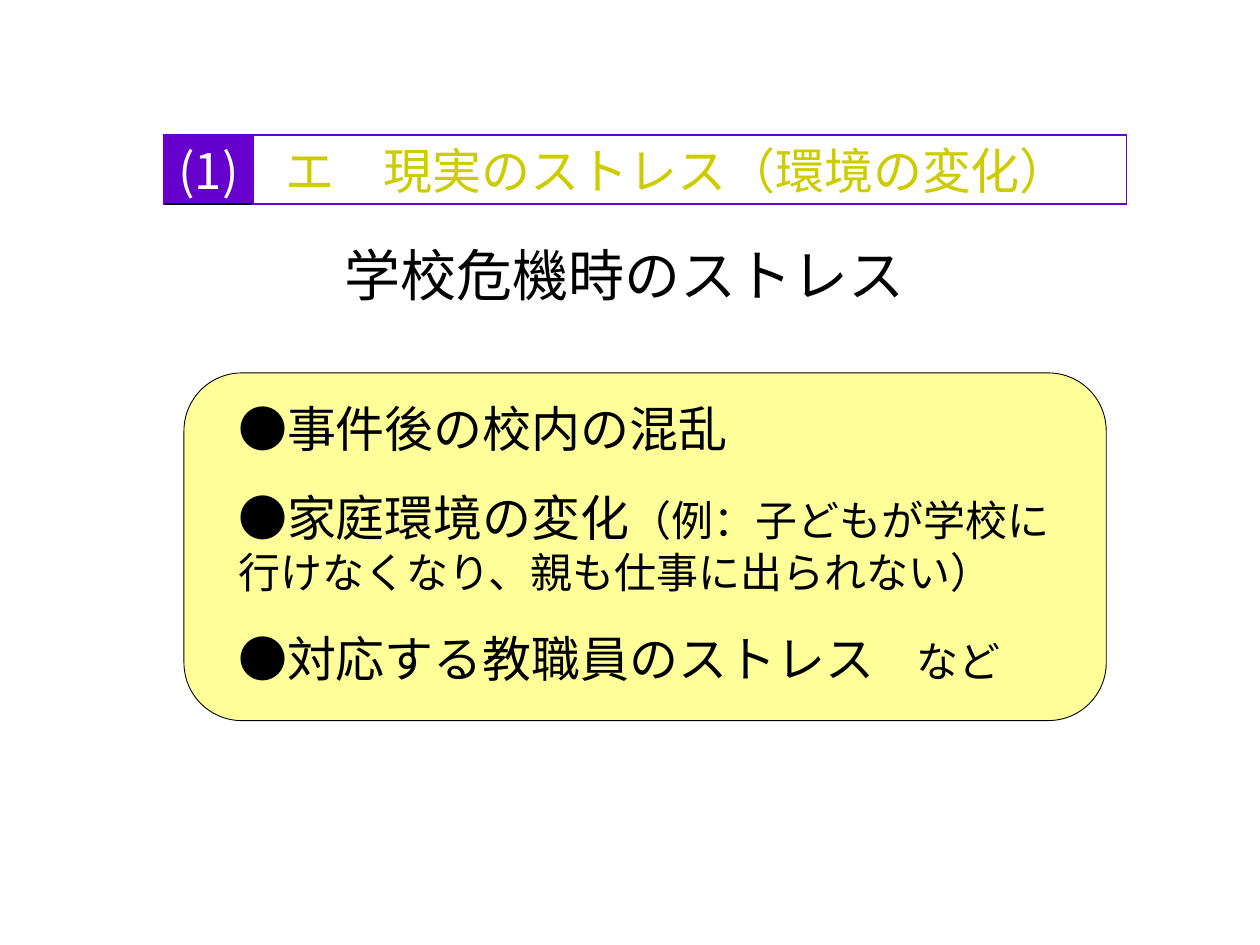
"""Build a slide on the stress a school faces during a crisis."""
from dataclasses import dataclass

from lxml.etree import SubElement
from pptx import Presentation
from pptx.dml.color import RGBColor
from pptx.enum.shapes import MSO_SHAPE as Shape
from pptx.enum.text import MSO_ANCHOR as Anchor, PP_ALIGN as Align
from pptx.oxml.ns import qn
from pptx.util import Inches, Pt

BLACK = RGBColor(0x00, 0x00, 0x00)
WHITE = RGBColor(0xFF, 0xFF, 0xFF)
PURPLE = RGBColor(0x66, 0x00, 0xCC)
OLIVE = RGBColor(0xCC, 0xCC, 0x00)
YELLOW = RGBColor(0xFF, 0xFF, 0x99)
JAPANESE = "Noto Sans CJK JP"
INSET = 0.04


@dataclass(frozen=True)
class Point:
    top: float
    width: float
    height: float
    main: str
    detail: str = ""


@dataclass(frozen=True)
class HeaderCell:
    text: str
    width: float
    fill: RGBColor
    color: RGBColor
    font: str
    left_margin: float
    align: Align
    bottom: RGBColor


POINTS = (
    Point(3.12, 6.3, 0.55, "●事件後の校内の混乱"),
    Point(3.83, 6.53, 0.95, "●家庭環境の変化",
          "（例：子どもが学校に行けなくなり、親も仕事に出られない）"),
    Point(4.95, 6.3, 0.55, "●対応する教職員のストレス", "　など"),
)
HEADER = (
    HeaderCell("(1)", 0.71, PURPLE, WHITE, JAPANESE, INSET, Align.CENTER, BLACK),
    HeaderCell("エ　現実のストレス（環境の変化）", 6.93, WHITE, OLIVE, "Arial",
               0.26, Align.LEFT, PURPLE),
)


def add_span(para, text: str, *, size: float, color: RGBColor = BLACK,
             font: str = JAPANESE) -> None:
    """Append one formatted run to a paragraph."""
    span = para.add_run()
    span.text = text
    span.font.size = Pt(size)
    span.font.color.rgb = color
    span.font.name = font
    SubElement(span.font._element, qn("a:ea")).set("typeface", JAPANESE)


def add_box(page, left: float, top: float, width: float, height: float):
    """Add a wrapping text box and return its frame."""
    box = page.shapes.add_textbox(Inches(left), Inches(top), Inches(width), Inches(height))
    box.text_frame.word_wrap = True
    return box.text_frame


def add_panel(page) -> None:
    """Draw the rounded panel behind the points."""
    panel = page.shapes.add_shape(Shape.ROUNDED_RECTANGLE, Inches(1.46), Inches(2.96),
                                  Inches(7.32), Inches(2.76))
    panel.shadow.inherit = False
    panel.fill.solid()
    panel.fill.fore_color.rgb = YELLOW
    panel.line.color.rgb = BLACK
    panel.line.width = Pt(0.5)


def add_title(page) -> None:
    """Write the centred title."""
    frame = add_box(page, 2.4, 1.94, 5.12, 0.47)
    frame.vertical_anchor = Anchor.MIDDLE
    para = frame.paragraphs[0]
    para.alignment = Align.CENTER
    add_span(para, "学校危機時のストレス", size=32)


def add_point(page, point: Point) -> None:
    """Write one point with its smaller detail."""
    frame = add_box(page, 1.85, point.top, point.width, point.height)
    frame.margin_left = frame.margin_right = Inches(INSET)
    frame.margin_top = frame.margin_bottom = Inches(INSET)
    para = frame.paragraphs[0]
    add_span(para, point.main, size=28)
    if point.detail:
        add_span(para, point.detail, size=24)


def set_borders(cell, bottom: RGBColor) -> None:
    """Outline a cell in purple with its own bottom colour."""
    properties = cell._tc.get_or_add_tcPr()
    edges = {"a:lnL": PURPLE, "a:lnR": PURPLE, "a:lnT": PURPLE, "a:lnB": bottom}
    for index, (tag, color) in enumerate(edges.items()):
        edge = properties.makeelement(qn(tag), {"w": str(Pt(1))})
        fill = SubElement(edge, qn("a:solidFill"))
        SubElement(fill, qn("a:srgbClr")).set("val", str(color))
        properties.insert(index, edge)


def add_header(page) -> None:
    """Draw the section header as a one-row table."""
    width = sum(entry.width for entry in HEADER)
    table = page.shapes.add_table(1, len(HEADER), Inches(1.3), Inches(1.07),
                                  Inches(width), Inches(0.55)).table
    table.first_row = table.horz_banding = False
    for index, entry in enumerate(HEADER):
        table.columns[index].width = Inches(entry.width)
        cell = table.cell(0, index)
        cell.margin_left, cell.margin_right = Inches(entry.left_margin), Inches(INSET)
        cell.margin_top, cell.margin_bottom = Inches(0.13), Inches(0)
        cell.fill.solid()
        cell.fill.fore_color.rgb = entry.fill
        set_borders(cell, entry.bottom)
        para = cell.text_frame.paragraphs[0]
        para.alignment = entry.align
        para.line_spacing = Pt(30)
        add_span(para, entry.text, size=28, color=entry.color, font=entry.font)


def main() -> None:
    """Assemble and save the deck."""
    deck = Presentation()
    deck.slide_width, deck.slide_height = Inches(10), Inches(7.5)
    page = deck.slides.add_slide(deck.slide_layouts[6])
    add_panel(page)
    add_title(page)
    for point in POINTS:
        add_point(page, point)
    add_header(page)
    deck.save("out.pptx")


if __name__ == "__main__":
    main()
